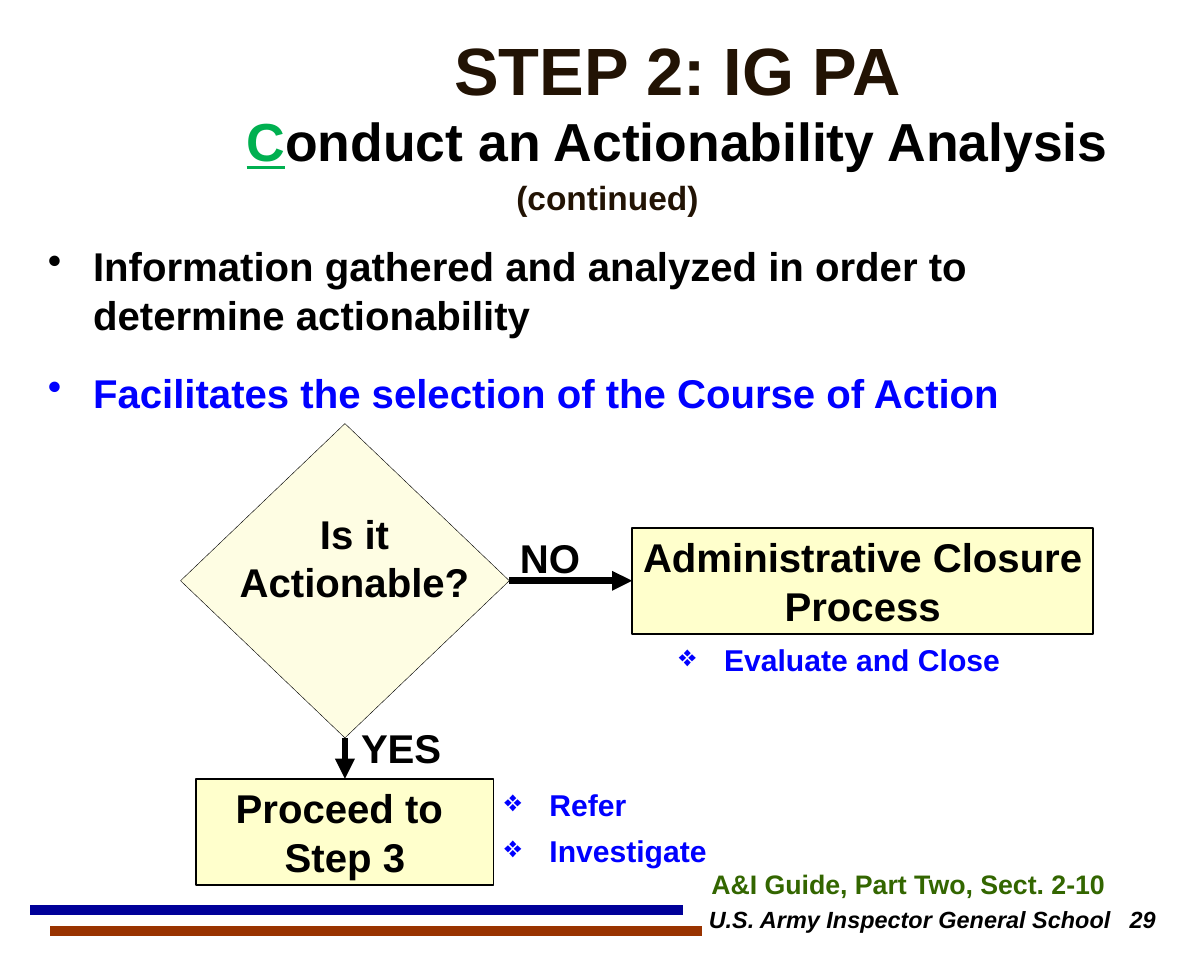
from dataclasses import dataclass

import pptx
import pptx.dml.color
import pptx.enum.shapes
import pptx.enum.text
import pptx.oxml
import pptx.oxml.ns
import pptx.util

Pt = pptx.util.Pt
Align = pptx.enum.text.PP_ALIGN
Anchor = pptx.enum.text.MSO_ANCHOR
Shape = pptx.enum.shapes.MSO_SHAPE


@dataclass(frozen=True)
class Theme:
    font: str = "Arial"
    black: str = "000000"
    brown: str = "221304"
    blue: str = "0000FF"
    green: str = "00B050"
    guide_green: str = "336600"
    box_fill: str = "FFFFCC"
    diamond_fill: str = "FEFDE3"
    rule_blue: str = "000099"
    rule_red: str = "993300"
    title: float = 40
    subtitle: float = 32
    body: float = 24
    continued: float = 20
    option: float = 18
    guide: float = 16
    footer: float = 14


THEME = Theme()


@dataclass(frozen=True)
class Box:
    left: float
    top: float
    width: float
    height: float

    def lengths(self) -> list:
        return [Pt(v) for v in (self.left, self.top, self.width, self.height)]


@dataclass(frozen=True)
class Line:
    text: str
    size: float = THEME.body
    color: str = THEME.black
    align: Align = Align.LEFT
    bullet: str = ""
    indent: float = 0
    before: float = 0
    after: float = 0
    tab: float = 0
    italic: bool = False


@dataclass(frozen=True)
class Label:
    box: Box
    lines: tuple
    wrap: bool = True


@dataclass(frozen=True)
class Node:
    box: Box
    shape: Shape
    fill: str
    border: float
    lines: tuple = ()


@dataclass(frozen=True)
class Rule:
    left: float
    top: float
    right: float
    color: str


def rgb(color: str) -> pptx.dml.color.RGBColor:
    return pptx.dml.color.RGBColor.from_string(color)


def add_xml(parent, xml: str) -> None:
    head, rest = xml.split(" ", 1)
    parent.append(pptx.oxml.parse_xml(f"{head} {pptx.oxml.ns.nsdecls('a')} {rest}"))


def set_font(font, size: float, color: str) -> None:
    font.name = THEME.font
    font.size = Pt(size)
    font.bold = True
    font.color.rgb = rgb(color)


def write_lines(frame, lines: tuple) -> None:
    for number, line in enumerate(lines):
        paragraph = frame.add_paragraph() if number else frame.paragraphs[0]
        properties = paragraph._p.get_or_add_pPr()
        if line.bullet:
            properties.set("marL", str(Pt(line.indent)))
            properties.set("indent", str(-Pt(line.indent)))
            add_xml(properties, f'<a:buChar char="{line.bullet}"/>')
        if line.tab:
            add_xml(properties, f'<a:tabLst ><a:tab pos="{Pt(line.tab)}" algn="l"/></a:tabLst>')
        paragraph.alignment = line.align
        if number:
            paragraph.space_before = Pt(line.before)
        paragraph.space_after = Pt(line.after)
        paragraph.add_run().text = line.text
        set_font(paragraph.font, line.size, line.color)
        paragraph.font.italic = line.italic


def add_label(slide, label: Label) -> None:
    frame = slide.shapes.add_textbox(*label.box.lengths()).text_frame
    frame.word_wrap = label.wrap
    write_lines(frame, label.lines)


def add_node(slide, node: Node):
    shape = slide.shapes.add_shape(node.shape, *node.box.lengths())
    shape.shadow.inherit = False
    shape.fill.solid()
    shape.fill.fore_color.rgb = rgb(node.fill)
    shape.line.color.rgb = rgb(THEME.black)
    shape.line.width = Pt(node.border)
    frame = shape.text_frame
    frame.word_wrap = True
    frame.vertical_anchor = Anchor.TOP
    frame.margin_left = frame.margin_right = Pt(6)
    frame.margin_top = frame.margin_bottom = Pt(3)
    write_lines(frame, node.lines)
    return shape


def add_line(slide, ends: tuple, color: str, width: float):
    line = slide.shapes.add_connector(
        pptx.enum.shapes.MSO_CONNECTOR.STRAIGHT, *(Pt(v) for v in ends))
    line.line.color.rgb = rgb(color)
    line.line.width = Pt(width)
    add_xml(line._element.spPr, "<a:effectLst />")
    return line


def add_arrow(slide, start, start_side: int, end, end_side: int) -> None:
    arrow = add_line(slide, (0, 0, 0, 0), THEME.black, 4)
    arrow.begin_connect(start, start_side)
    arrow.end_connect(end, end_side)
    add_xml(arrow.line._get_or_add_ln(), '<a:tailEnd type="triangle"/>')


def add_title(slide, box: Box) -> None:
    frame = slide.shapes.add_textbox(*box.lengths()).text_frame
    frame.word_wrap = True
    frame.vertical_anchor = Anchor.MIDDLE
    heading = frame.paragraphs[0]
    heading.alignment = Align.CENTER
    for text, size, color in (("STEP 2: IG PA", THEME.title, THEME.brown),
                              ("C", THEME.subtitle, THEME.green),
                              ("onduct an Actionability Analysis", THEME.subtitle, THEME.black)):
        run = heading.add_run()
        run.text = text
        set_font(run.font, size, color)
        if size == THEME.title:
            heading.add_line_break()
        run.font.underline = color == THEME.green


def centered(*texts: str) -> tuple:
    return tuple(Line(text, align=Align.CENTER) for text in texts)


def options(*texts: str) -> tuple:
    return tuple(Line(text, THEME.option, THEME.blue, bullet="❖", indent=27, before=6)
                 for text in texts)


RULES = (Rule(18, 544.3, 408.2, THEME.rule_blue), Rule(30.2, 556.6, 419.8, THEME.rule_red))
STEP_3 = Node(Box(117.4, 465.8, 177.8, 63.4), Shape.RECTANGLE, THEME.box_fill, 1,
              centered("Proceed to ", "Step 3"))
DECISION = Node(Box(108, 253.4, 196.6, 188), Shape.FLOWCHART_DECISION, THEME.diamond_fill, 0.25)
CLOSURE = Node(Box(378, 315.7, 275.8, 63.4), Shape.RECTANGLE, THEME.box_fill, 1,
               centered("Administrative Closure Process"))
POINTS = (("Information gathered and analyzed in order to determine actionability", THEME.black),
          ("Facilitates the selection of the Course of Action", THEME.blue))
LABELS = (
    Label(Box(120.2, 301, 183.6, 65.5), centered("Is it Actionable?")),
    Label(Box(208.8, 429.1, 63.4, 36), (Line("YES"),), wrap=False),
    Label(Box(303.8, 315.4, 51.1, 36), (Line("NO"),), wrap=False),
    Label(Box(301.7, 102.2, 124.6, 31.7),
          (Line("(continued)", THEME.continued, THEME.brown),), wrap=False),
    Label(Box(21.6, 141.1, 676.8, 113),
          tuple(Line(text, color=color, bullet="•", indent=27, after=18)
                for text, color in POINTS)),
    Label(Box(398.9, 380.2, 257.8, 28.8), options("Evaluate and Close")),
    Label(Box(294.5, 466.6, 167, 56.9), options("Refer", "Investigate")),
    Label(Box(418.3, 515.5, 301.7, 26.6),
          (Line("A&I Guide, Part Two, Sect. 2-10", THEME.guide, THEME.guide_green),)),
    Label(Box(416.8, 537.8, 303.2, 38.2),
          (Line("U.S. Army Inspector General School\t29", THEME.footer, tab=251.7, italic=True),)),
)


def main() -> None:
    deck = pptx.Presentation()
    deck.slide_width, deck.slide_height = Pt(720), Pt(576)
    slide = deck.slides.add_slide(deck.slide_layouts[6])

    # Footer rules and heading
    for rule in RULES:
        add_line(slide, (rule.left, rule.top, rule.right, rule.top), rule.color, 6)
    add_title(slide, Box(120.2, 12.2, 570.2, 95.8))

    # Decision flow
    step_3, decision, closure = (add_node(slide, node) for node in (STEP_3, DECISION, CLOSURE))
    add_arrow(slide, decision, 3, closure, 1)
    add_arrow(slide, decision, 2, step_3, 0)

    # Bullets, branch names and references
    for label in LABELS:
        add_label(slide, label)
    deck.save("out.pptx")


if __name__ == "__main__":
    main()
